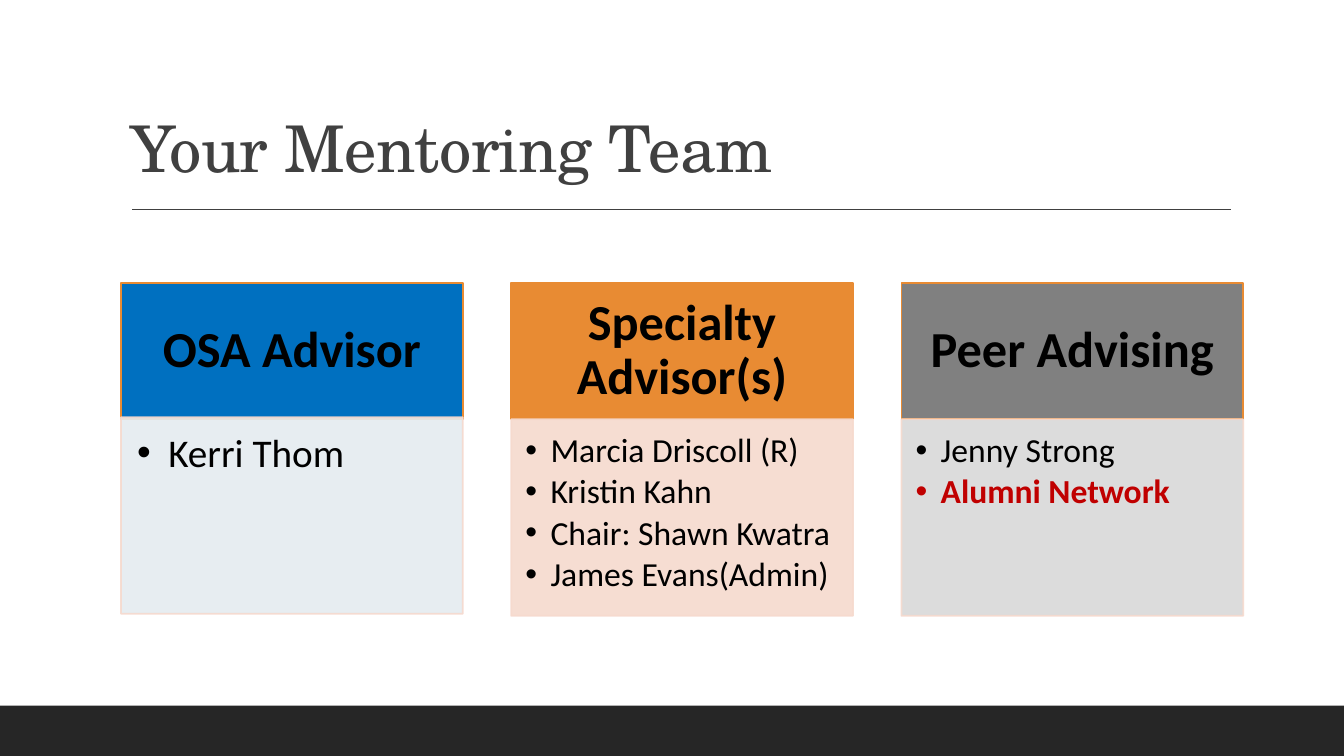
import pptx
import pptx.dml.color
import pptx.enum.shapes
import pptx.enum.text
import pptx.oxml.ns
import pptx.util
from lxml import etree

EMU_PER_PX = 9144
ALIGN = pptx.enum.text.PP_ALIGN
ANCHOR = pptx.enum.text.MSO_ANCHOR
qn = pptx.oxml.ns.qn


def px(length):
    return pptx.util.Emu(length * EMU_PER_PX)


def color(hex_string):
    return pptx.dml.color.RGBColor.from_string(hex_string)


def style(target, formats):
    for attribute, value in formats.items():
        setattr(target, attribute, value)


class MentoringSlide:
    ink = "000000"
    charcoal = "404040"
    body_font = "Calibri"
    title_font = "TeX Gyre Schola"

    def __init__(self, deck):
        self.slide = deck.slides.add_slide(deck.slide_layouts[6])

    def box(self, bounds, fill, border=None, opacity=100):
        panel = self.slide.shapes.add_shape(
            pptx.enum.shapes.MSO_SHAPE.RECTANGLE, *map(px, bounds))
        panel.shadow.inherit = False
        panel.fill.solid()
        panel.fill.fore_color.rgb = color(fill)
        if border:
            panel.line.color.rgb = color(border)
            panel.line.width = pptx.util.Pt(1.25)
        else:
            panel.line.fill.background()
        if opacity < 100:
            for tint in panel._element.spPr.iter(qn("a:srgbClr")):
                etree.SubElement(tint, qn("a:alpha")).set("val", str(opacity * 1000))
        return panel

    def rule(self, left, top, right):
        divider = self.slide.shapes.add_connector(
            pptx.enum.shapes.MSO_CONNECTOR.STRAIGHT, px(left), px(top), px(right), px(top))
        divider.line.color.rgb = color(self.charcoal)
        divider.line.width = pptx.util.Pt(1)
        etree.SubElement(divider._element.spPr, qn("a:effectLst"))

    def frame(self, holder, insets, anchor):
        sides = ("margin_left", "margin_top", "margin_right", "margin_bottom")
        style(holder.text_frame, {"word_wrap": True, "vertical_anchor": anchor,
                                  **dict(zip(sides, map(px, insets)))})
        return holder.text_frame

    def line(self, paragraph, words, size, tint, font, bold=False,
             align=ALIGN.LEFT, after=0, indent=0):
        style(paragraph, {"alignment": align, "line_spacing": 0.9,
                          "space_after": pptx.util.Pt(after)})
        if indent:
            properties = paragraph._p.get_or_add_pPr()
            properties.set("marL", str(px(indent)))
            properties.set("indent", str(px(-indent)))
            etree.SubElement(properties, qn("a:buFont")).set("typeface", "Arial")
            etree.SubElement(properties, qn("a:buChar")).set("char", "•")
        run = paragraph.add_run()
        run.text = words
        style(run.font, {"size": pptx.util.Pt(size), "name": font, "bold": bold})
        run.font.color.rgb = color(tint)
        return run

    def title(self, bounds, words):
        heading = self.slide.shapes.add_textbox(*map(px, bounds))
        text = self.frame(heading, (10, 5, 10, 5), ANCHOR.BOTTOM)
        run = self.line(text.paragraphs[0], words, 46, self.charcoal, self.title_font)
        run._r.get_or_add_rPr().set("spc", "-50")

    def header(self, bounds, words, fill):
        text = self.frame(self.box(bounds, fill, "E88B33"), (27, 16, 27, 16), ANCHOR.MIDDLE)
        self.line(text.paragraphs[0], words, 36, self.ink, self.body_font, True, ALIGN.CENTER)

    def members(self, bounds, people, fill, size, insets, indent):
        text = self.frame(self.box(bounds, fill, "F6DACE", 90), insets, ANCHOR.TOP)
        for position, (person, tint, bold) in enumerate(people):
            paragraph = text.add_paragraph() if position else text.paragraphs[0]
            self.line(paragraph, person, size, tint, self.body_font, bold,
                      after=size * 0.15, indent=indent)


def main():
    deck = pptx.Presentation()
    style(deck, {"slide_width": px(1333), "slide_height": px(750)})
    team = MentoringSlide(deck)
    team.box((0, 700, 1333, 50), "262626")
    team.rule(131, 208, 1221)
    team.title((120, 31, 1100, 159), "Your Mentoring Team")

    ink = team.ink
    large = (28, (16, 16, 22, 24), 31)
    small = (24, (14, 14, 19, 21), 25)
    advisors = [
        ("OSA Advisor", "0070C0", "E5ECF0", 414, large, [("Kerri Thom", ink, False)]),
        ("Specialty Advisor(s)", "E88B33", "F6DACE", 416, small,
         [("Marcia Driscoll (R)", ink, False), ("Kristin Kahn", ink, False),
          ("Chair: Shawn Kwatra", ink, False), ("James Evans(Admin)", ink, False)]),
        ("Peer Advising", "808080", "D9D9D9", 416, small,
         [("Jenny Strong", ink, False), ("Alumni Network", "C00000", True)]),
    ]
    for column, (role, strong, pale, top, sizing, people) in enumerate(advisors):
        left = 120 + column * 387
        team.header((left, 281, 339, 135), role, strong)
        team.members((left, top, 339, 195), people, pale, *sizing)
    deck.save("out.pptx")


if __name__ == "__main__":
    main()
